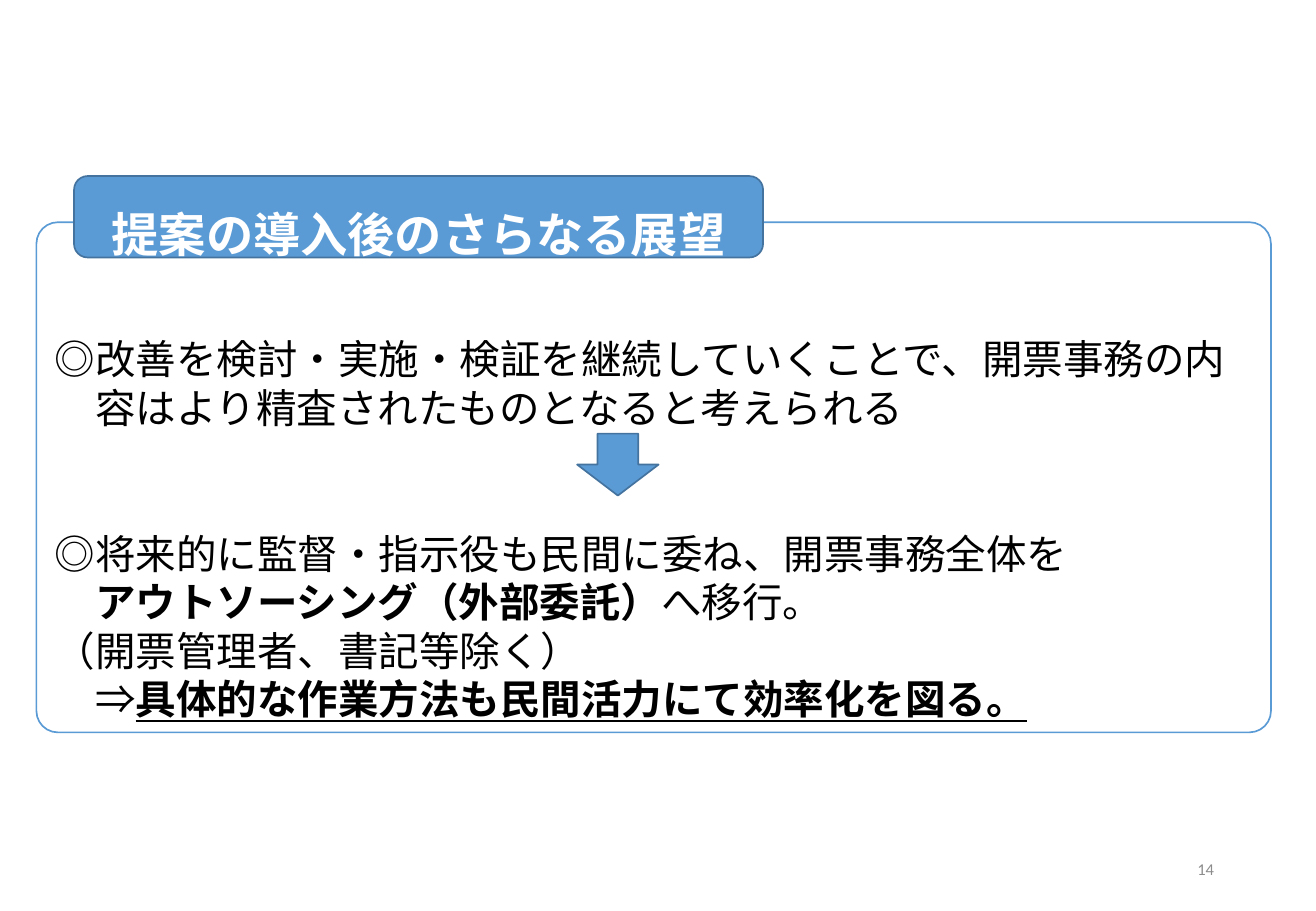
from pptx import Presentation
from pptx.dml.color import RGBColor
from pptx.enum.shapes import MSO_SHAPE
from pptx.enum.text import MSO_ANCHOR, PP_ALIGN
from pptx.util import Inches, Pt

ROUNDED, DOWN_ARROW = MSO_SHAPE.ROUNDED_RECTANGLE, MSO_SHAPE.DOWN_ARROW
TOP, MIDDLE = MSO_ANCHOR.TOP, MSO_ANCHOR.MIDDLE
LEFT, CENTER, RIGHT = PP_ALIGN.LEFT, PP_ALIGN.CENTER, PP_ALIGN.RIGHT

COLORS = {"white": "FFFFFF", "black": "000000", "blue": "5B9BD5",
          "dark_blue": "43739E", "gray": "8C8C8C"}
JAPANESE, LATIN = "Noto Sans CJK JP", "Calibri"
LINE_PITCH = 28.8  # points, body text
STRONG = {"bold": True}
STRONG_UNDERLINED = {"bold": True, "underline": True}

# Each line: blank lines' worth of space above it, then its spans
OUTLOOK = [
    (0, [("◎改善を検討・実施・検証を継続していくことで、開票事務の内", {})]),
    (0, [("　容はより精査されたものとなると考えられる", {})]),
    (2, [("◎将来的に監督・指示役も民間に委ね、開票事務全体を", {})]),
    (0, [("　アウトソーシング（外部委託）", STRONG), ("へ移行。", {})]),
    (0, [("（開票管理者、書記等除く）", {})]),
    (0, [("　⇒", {}),
         ("具体的な作業方法も民間活力にて効率化を図る。", STRONG_UNDERLINED)]),
]


def color(name):
    return RGBColor.from_string(COLORS[name])


class SlideBuilder:
    def __init__(self, slide):
        self.slide = slide

    def shape(self, kind, area, fill, line, corner=None):
        shape = self.slide.shapes.add_shape(kind, *map(Inches, area))
        shape.shadow.inherit = False
        shape.fill.solid()
        shape.fill.fore_color.rgb = color(fill)
        shape.line.color.rgb = color(line)
        shape.line.width = Pt(1)
        if corner is not None:
            shape.adjustments[0] = corner
        return shape

    def text_box(self, area):
        return self.slide.shapes.add_textbox(*map(Inches, area))

    def add_text(self, box, lines, font, size, ink, align=LEFT, anchor=TOP,
                 pitch=None, top_inset=0.05):
        frame = box.text_frame
        frame_format = {"word_wrap": True, "vertical_anchor": anchor,
                        "margin_top": Inches(top_inset)}
        for name, value in frame_format.items():
            setattr(frame, name, value)
        for index, (gap, spans) in enumerate(lines):
            para = frame.add_paragraph() if index else frame.paragraphs[0]
            para.alignment = align
            if pitch:
                para.line_spacing = Pt(pitch)
            if gap:
                para.space_before = Pt(gap * pitch)
            for text, emphasis in spans:
                span = para.add_run()
                span.text = text
                span.font.color.rgb = color(ink)
                span_format = {"name": font, "size": Pt(size), **emphasis}
                for name, value in span_format.items():
                    setattr(span.font, name, value)
                # East Asian glyphs take their typeface from a:ea
                east_asian = span.font._element.makeelement(
                    "{http://schemas.openxmlformats.org/drawingml/2006/main}ea",
                    {"typeface": font})
                span.font._element.append(east_asian)


def main():
    deck = Presentation()
    deck.slide_width, deck.slide_height = Inches(10.83), Inches(7.5)
    page = SlideBuilder(deck.slides.add_slide(deck.slide_layouts[6]))

    # Outlook panel
    panel = page.shape(ROUNDED, (0.3, 1.83, 10.16, 4.2), "white", "blue", 0.042)
    page.add_text(panel, OUTLOOK, JAPANESE, 24, "black",
                  pitch=LINE_PITCH, top_inset=0.87)

    # Page number
    number = page.text_box((7.65, 6.95, 2.44, 0.4))
    page.add_text(number, [(0, [("14", {})])], LATIN, 9.8, "gray", RIGHT, MIDDLE)

    # Heading tab
    heading = page.shape(ROUNDED, (0.61, 1.45, 5.67, 0.67), "blue", "dark_blue")
    page.add_text(heading, [(0, [("提案の導入後のさらなる展望", STRONG)])],
                  JAPANESE, 28, "white", CENTER, MIDDLE,
                  pitch=50.4, top_inset=0.1)

    # Arrow between the two stages
    page.shape(DOWN_ARROW, (4.75, 3.57, 0.67, 0.51), "blue", "dark_blue")

    deck.save("out.pptx")


if __name__ == "__main__":
    main()
